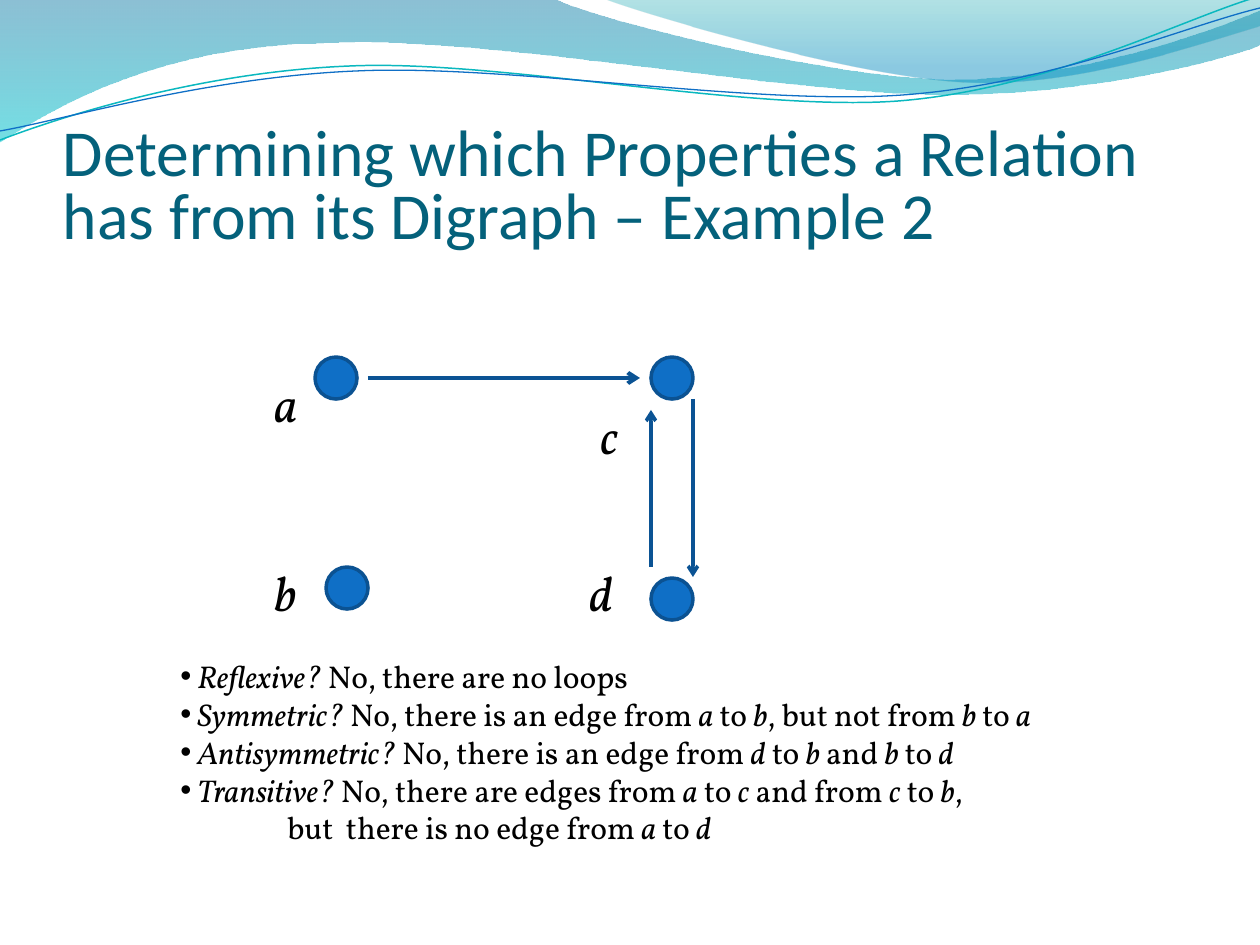
from lxml import etree
from pptx import Presentation
from pptx.dml.color import RGBColor
from pptx.enum.shapes import MSO_CONNECTOR, MSO_SHAPE
from pptx.enum.text import MSO_ANCHOR
from pptx.oxml.ns import qn
from pptx.util import Emu, Pt

PX = 914400 // 126
STRAIGHT = MSO_CONNECTOR.STRAIGHT
OVAL = MSO_SHAPE.OVAL
BOTTOM = MSO_ANCHOR.BOTTOM
NODE_SIZE = 42

BAND = [(0, 0), (554, -1), (600, 21, 837, 79, 955, 79), (1075, 79, 1207, 33, 1260, 11),
        (1261, 45), (1239, 55, 1096, 96, 940, 94), (784, 94, 481, 35, 324, 43),
        (163, 45, 58, 105, -1, 142)]
CREST = [(604, -1), (641, 14, 859, 78, 969, 82), (1079, 87, 1211, 40, 1260, 26), (1260, 0)]
RIPPLES = [
    ([(0, 140), (60, 117, 199, 72, 349, 66), (497, 59, 747, 112, 898, 101),
      (1050, 89, 1182, 19, 1257, -3)], "0AB8BF", 0.85),
    ([(0, 131), (59, 121, 207, 77, 357, 71), (508, 64, 752, 106, 903, 95),
      (1053, 84, 1185, 26, 1260, 8)], "0F6FC6", 0.75),
]
NODES = {"a": ((53, 0), (0, 10)), "c": ((389, 0), (326, 42)),
         "b": ((64, 210), (0, 199)), "d": ((389, 221), (315, 199))}
EDGES = [((106, 21), (378, 21), 2.25), ((389, 210), (389, 53), 2), ((431, 42), (431, 220), 2)]
ANSWERS = [
    "*Reflexive?* No, there are no loops",
    "*Symmetric?* No, there is an edge from *a* to *b*, but not from *b* to *a*",
    "*Antisymmetric?* No, there is an edge from *d* to *b* and *b* to *d*",
    "*Transitive?* No, there are edges from *a* to *c* and from *c* to *b*,",
]
CONTINUATION = "but  there is no edge from *a* to *d*"


def px(length):
    """Turn pixels into EMU."""
    return Emu(int(length * PX))


def color(value):
    """Turn a hex string into a colour."""
    return RGBColor.from_string(value)


def add_outline(slide, box, segments, close):
    """Draw an outline of lines and cubic curves relative to the box."""
    left, top = box
    ends = [(px(left + segment[-2]), px(top + segment[-1])) for segment in segments]
    builder = slide.shapes.build_freeform(*ends[0])
    builder.add_line_segments(ends[1:], close=close)
    shape = builder.convert_to_shape()
    shape.shadow.inherit = False
    lines = list(shape.element.spPr.iter(qn("a:lnTo")))
    for line, segment in zip(lines, segments[1:]):
        if len(segment) == 6:
            curve = etree.Element(qn("a:cubicBezTo"))
            for x, y in zip(segment[:4:2], segment[1:4:2]):
                etree.SubElement(curve, qn("a:pt"), x=str(px(left + x) - shape.left),
                                 y=str(px(top + y) - shape.top))
            line.getparent().replace(line, curve)
            curve.append(line[0])
    return shape


def add_wave(slide, box, segments, stops):
    """Draw a wave filled with a translucent gradient running downwards."""
    shape = add_outline(slide, box, segments, True)
    shape.line.fill.background()
    shape.fill.gradient()
    shape.fill.gradient_angle = 270
    for stop, (position, value, _) in zip(shape.fill.gradient_stops, stops):
        stop.position = position
        stop.color.rgb = color(value)
    for element, (_, _, opacity) in zip(shape.element.spPr.iter(qn("a:srgbClr")), stops):
        etree.SubElement(element, qn("a:alpha"), val=str(opacity * 1000))


def add_header(slide, box):
    """Draw the waves and ripples across the top."""
    add_wave(slide, box, BAND, [(0, "0074A1", 45), (1, "00C6CF", 55)])
    add_wave(slide, box, CREST, [(0, "00A1A9", 30), (0.8, "008BBF", 45)])
    for segments, value, width in RIPPLES:
        shape = add_outline(slide, box, segments, False)
        shape.fill.background()
        shape.line.color.rgb = color(value)
        shape.line.width = Pt(width)


def add_text_frame(slide, box):
    """Add a wrapping text box and return its frame."""
    frame = slide.shapes.add_textbox(*map(px, box)).text_frame
    frame.word_wrap = True
    return frame


def set_font(paragraph, name, size, value):
    """Set the font shared by all runs of a paragraph."""
    paragraph.font.name = name
    paragraph.font.size = Pt(size)
    paragraph.font.color.rgb = color(value)


def add_title(slide, box, text):
    """Write the slide title at the bottom of its box."""
    frame = add_text_frame(slide, box)
    frame.margin_left = frame.margin_right = frame.margin_bottom = 0
    frame.vertical_anchor = BOTTOM
    paragraph = frame.paragraphs[0]
    paragraph.text = text
    paragraph.line_spacing = 0.8
    set_font(paragraph, "Calibri", 37.5, "04617B")


def add_digraph(slide, box):
    """Draw the labelled nodes and directed edges."""
    left, top = box
    for label, ((x, y), (label_x, label_y)) in NODES.items():
        node = slide.shapes.add_shape(OVAL, px(left + x), px(top + y), px(NODE_SIZE), px(NODE_SIZE))
        node.shadow.inherit = False
        node.fill.solid()
        node.fill.fore_color.rgb = color("0F6FC6")
        node.line.color.rgb = color("0B5292")
        node.line.width = Pt(2)
        frame = add_text_frame(slide, (left + label_x, top + label_y, 53, 72))
        paragraph = frame.paragraphs[0]
        paragraph.text = label
        set_font(paragraph, "Vollkorn", 28, "000000")
        paragraph.font.italic = True
    for (x1, y1), (x2, y2), width in EDGES:
        edge = slide.shapes.add_connector(
            STRAIGHT, px(left + x1), px(top + y1), px(left + x2), px(top + y2))
        edge.line.color.rgb = color("0B5394")
        edge.line.width = Pt(width)
        properties = edge.element.spPr
        etree.SubElement(properties.find(qn("a:ln")), qn("a:tailEnd"), type="arrow")
        etree.SubElement(properties, qn("a:effectLst"))


def add_answers(slide, box):
    """List the properties, with the parts between asterisks in italics."""
    frame = add_text_frame(slide, box)
    for index, text in enumerate(ANSWERS + [CONTINUATION]):
        paragraph = frame.paragraphs[0] if index == 0 else frame.add_paragraph()
        properties = paragraph._p.get_or_add_pPr()
        if text == CONTINUATION:
            properties.set("marL", str(px(107)))
        else:
            properties.set("marL", str(px(17)))
            properties.set("indent", str(-px(17)))
            etree.SubElement(properties, qn("a:buFont"), typeface="Arial")
            etree.SubElement(properties, qn("a:buChar"), char="•")
        set_font(paragraph, "Vollkorn", 18, "000000")
        for position, part in enumerate(text.split("*")):
            if part:
                run = paragraph.add_run()
                run.text = part
                run.font.italic = position % 2 == 1


def main():
    """Build and save the slide."""
    presentation = Presentation()
    presentation.slide_width = px(1260)
    presentation.slide_height = px(945)
    slide = presentation.slides.add_slide(presentation.slide_layouts[6])
    add_header(slide, (0, 0))
    add_title(slide, (63, 94, 1134, 158),
              "Determining which Properties a Relation has from its Digraph – Example 2")
    add_digraph(slide, (262, 357))
    add_answers(slide, (168, 651, 1008, 204))
    presentation.save("out.pptx")


if __name__ == "__main__":
    main()
